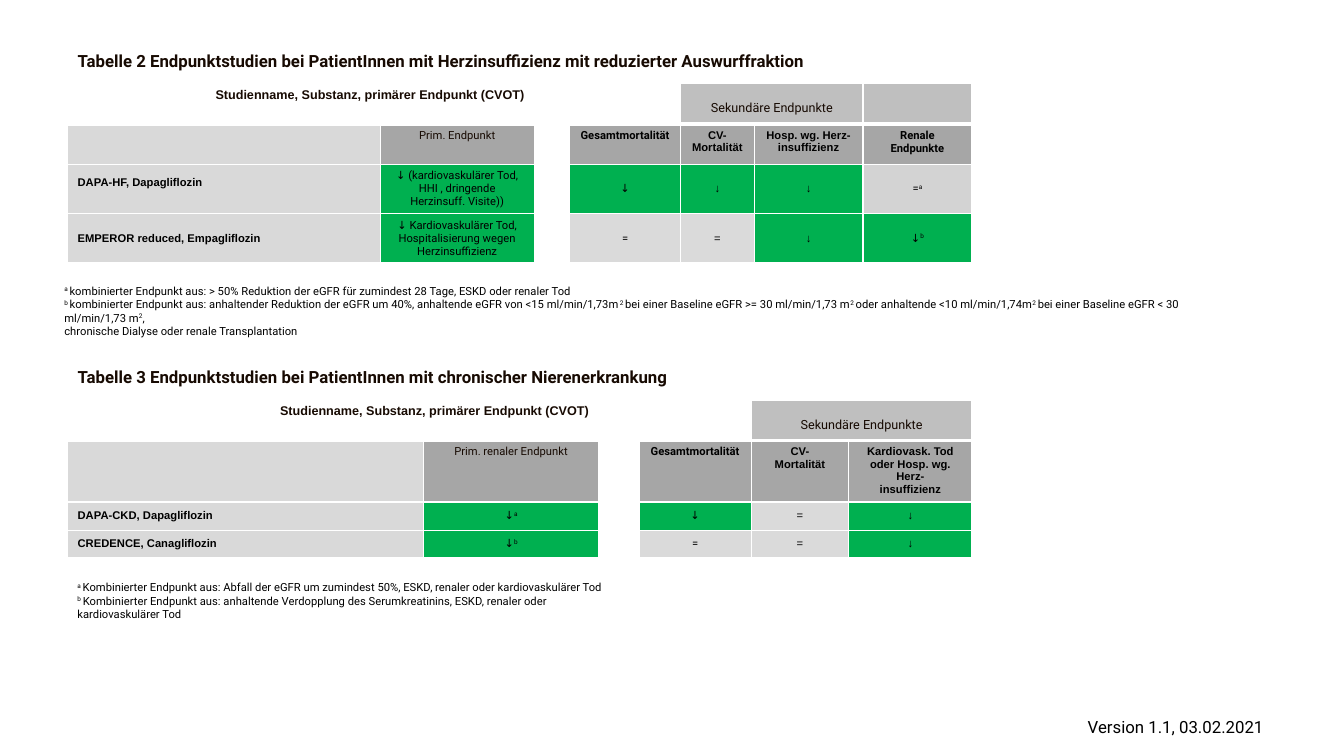
"""Builds the slide with two tables of endpoint studies and their footnotes."""
import pptx
import pptx.util
import pptx.dml.color
import pptx.enum.text
import pptx.oxml.ns
import lxml.etree

Inches = pptx.util.Inches
Pt = pptx.util.Pt
qn = pptx.oxml.ns.qn
Align = pptx.enum.text.PP_ALIGN
MIDDLE = pptx.enum.text.MSO_ANCHOR.MIDDLE


def color(code):
    """Turns a hex string into a colour."""
    return pptx.dml.color.RGBColor.from_string(code)


def write(frame, text, size, font="Roboto", hue="000000", bold=False, align=Align.LEFT):
    """Fills a frame; a line is a paragraph, text between carets is raised."""
    for num, line in enumerate(text.split("\n")):
        para = frame.add_paragraph() if num else frame.paragraphs[0]
        para.alignment = align
        for part, piece in enumerate(line.split("^")):
            if piece:
                run = para.add_run()
                run.text = piece
                run.font.size = Pt(size)
                run.font.name = font
                run.font.bold = bold
                run.font.color.rgb = color(hue)
                if part % 2:
                    run.font._element.set("baseline", "30000")


deck = pptx.Presentation()
deck.slide_width = Inches(13.33)
deck.slide_height = Inches(7.5)
slide = deck.slides.add_slide(deck.slide_layouts[6])

DARK = "170A02"
FONTS = ["Arial", "Roboto", "Roboto", "Roboto", "Arial", "Arial", "Roboto"]
STUDY = "Studienname, Substanz, primärer Endpunkt (CVOT)"
SECOND = "Sekundäre Endpunkte"

tables = [
    {
        "top": 0.46,
        "title": "Tabelle 2 Endpunktstudien bei PatientInnen mit Herzinsuffizienz mit reduzierter Auswurffraktion",
        "cols": [3.1, 1.53, 0.35, 1.1, 0.73, 1.08, 1.08],
        "rows": [0.36, 0.41, 0.4, 0.49, 0.49],
        "body": [
            ["", "Prim. Endpunkt", "", "Gesamtmortalität", "CV-\nMortalität",
             "Hosp. wg. Herz-\ninsuffizienz", "Renale Endpunkte"],
            ["DAPA-HF, Dapagliflozin",
             "↓ (kardiovaskulärer Tod, HHI , dringende Herzinsuff. Visite))",
             "", "↓", "↓", "↓", "=^a"],
            ["EMPEROR reduced, Empagliflozin",
             "↓ Kardiovaskulärer Tod, Hospitalisierung wegen Herzinsuffizienz",
             "", "=", "=", "↓", "↓^b"],
        ],
    },
    {
        "top": 3.6,
        "title": "Tabelle 3 Endpunktstudien bei PatientInnen mit chronischer Nierenerkrankung",
        "cols": [3.53, 1.74, 0.4, 1.11, 0.97, 1.22],
        "rows": [0.36, 0.41, 0.61, 0.28, 0.27],
        "body": [
            ["", "Prim. renaler Endpunkt", "", "Gesamtmortalität", "CV-\nMortalität",
             "Kardiovask. Tod oder Hosp. wg. Herz-\ninsuffizienz"],
            ["DAPA-CKD, Dapagliflozin", "↓^a", "", "↓", "=", "↓"],
            ["CREDENCE, Canagliflozin", "↓^b", "", "=", "=", "↓"],
        ],
    },
]

for item in tables:
    cols, rows = item["cols"], item["rows"]
    frame = slide.shapes.add_table(len(rows), len(cols), Inches(0.67), Inches(item["top"]),
                                   Inches(sum(cols)), Inches(sum(rows)))
    table = frame.table
    table.first_row = False
    table.horz_banding = False
    for col, width in zip(table.columns, cols):
        col.width = Inches(width)
    for row, height in zip(table.rows, rows):
        row.height = Inches(height)
    table.cell(0, 0).merge(table.cell(0, 5))
    table.cell(1, 0).merge(table.cell(1, 1))
    table.cell(1, 4).merge(table.cell(1, 5))

    blank = [""] * len(cols)
    grid = [[item["title"]] + blank[1:],
            [STUDY, "", "", "", SECOND] + blank[5:]] + item["body"]
    for r, line in enumerate(grid):
        for c, text in enumerate(line):
            cell = table.cell(r, c)
            props = cell._tc.get_or_add_tcPr()
            thick = {"lnT": r in (1, 2), "lnB": r in (0, 1)}
            for side in ("lnL", "lnR", "lnT", "lnB"):
                width = Pt(3 if thick.get(side) else 1)
                edge = lxml.etree.SubElement(props, qn("a:" + side), w=str(width))
                fill = lxml.etree.SubElement(edge, qn("a:solidFill"))
                lxml.etree.SubElement(fill, qn("a:srgbClr"), val="FFFFFF")

            if r == 0 or c == 2 or (r == 1 and c < 4):
                back = "FFFFFF"
            elif r == 1:
                back = "BFBFBF"
            elif c == 0:
                back = "D9D9D9"
            elif r == 2:
                back = "A6A6A6"
            elif "↓" in text:
                back = "00B050"
            else:
                back = "D3D3D3" if c == 6 else "DADADA"
            cell.fill.solid()
            cell.fill.fore_color.rgb = color(back)

            body = cell.text_frame
            if not text:
                para = body.paragraphs[0]._p
                lxml.etree.SubElement(para, qn("a:endParaRPr"), sz="800")
            elif r == 0:
                write(body, text, 12, hue=DARK, bold=True)
            elif text == STUDY:
                write(body, text, 9, "Arial", DARK, True, Align.RIGHT)
            elif text == SECOND:
                cell.margin_top = Inches(0.18)
                write(body, text, 9, hue=DARK, align=Align.CENTER)
            else:
                bold = c == 0 or (r == 2 and c > 1)
                hue = DARK if r == 2 and c == 1 else "000000"
                align = Align.CENTER if c else Align.LEFT
                write(body, text, 8, FONTS[c], hue, bold, align)
            if r > 2:
                cell.vertical_anchor = MIDDLE
            if text.startswith("DAPA-HF"):
                cell.margin_bottom = Inches(0.18)

notes = [
    (0.67, 5.71, 5.56, 0.5, 8,
     "^a ^Kombinierter Endpunkt aus: Abfall der eGFR um zumindest 50%, ESKD, renaler oder kardiovaskulärer Tod\n"
     "^b ^Kombinierter Endpunkt aus: anhaltende Verdopplung des Serumkreatinins, ESKD, renaler oder "
     "kardiovaskulärer Tod"),
    (0.54, 2.77, 11.38, 0.63, 8,
     "^a ^kombinierter Endpunkt aus: > 50% Reduktion der eGFR für zumindest 28 Tage, ESKD oder renaler Tod\n"
     "^b ^kombinierter Endpunkt aus: anhaltender Reduktion der eGFR um 40%, anhaltende eGFR von "
     "<15 ml/min/1,73m^2 ^bei einer Baseline eGFR >= 30 ml/min/1,73 m^2 ^oder anhaltende "
     "<10 ml/min/1,74m^2 ^bei einer Baseline eGFR < 30 ml/min/1,73 m^2^,\n"
     "chronische Dialyse oder renale Transplantation"),
    (10.69, 7.06, 2, 0.3, 12, "Version 1.1, 03.02.2021"),
]
for left, top, width, height, size, text in notes:
    box = slide.shapes.add_textbox(Inches(left), Inches(top), Inches(width), Inches(height))
    box.text_frame.word_wrap = True
    write(box.text_frame, text, size)

deck.save("out.pptx")
